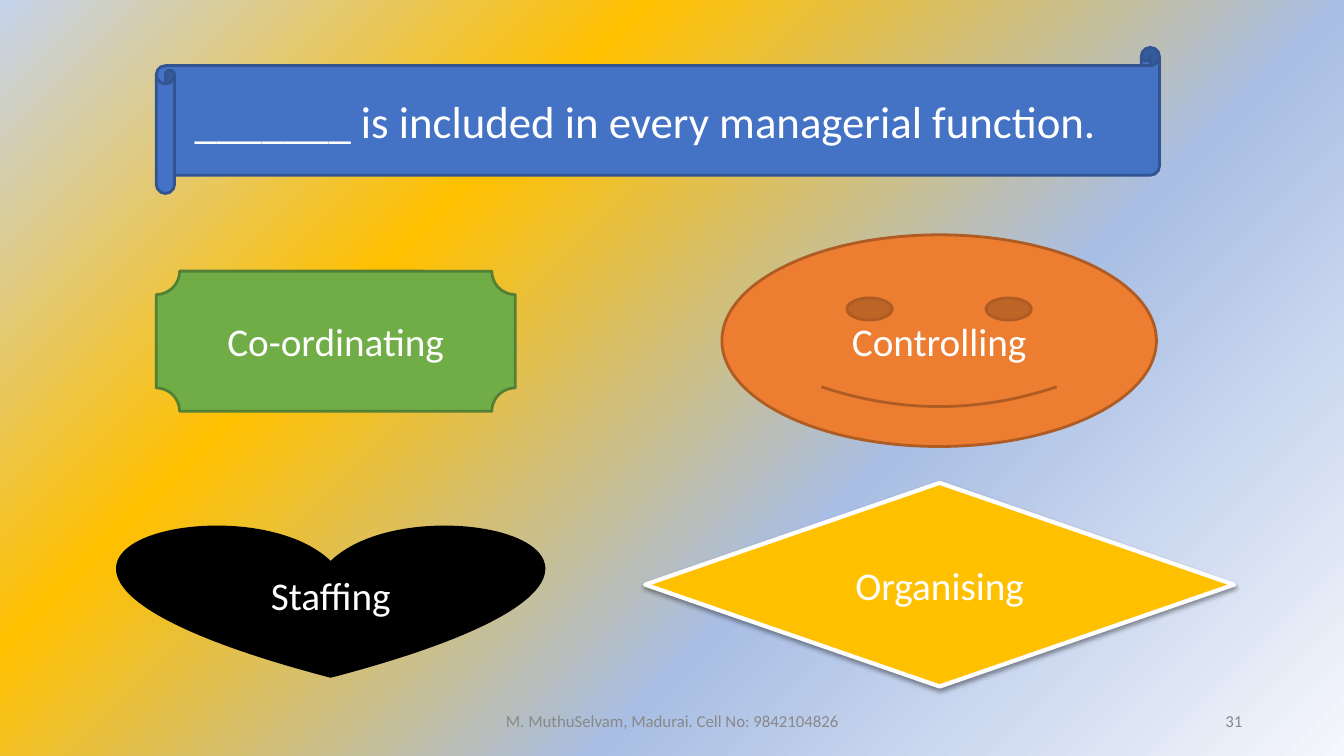
from lxml import etree
from pptx import Presentation
from pptx.dml.color import RGBColor
from pptx.enum.shapes import MSO_SHAPE as SHAPE
from pptx.enum.text import MSO_ANCHOR as ANCHOR, PP_ALIGN as ALIGN
from pptx.oxml.ns import qn
from pptx.util import Inches, Pt

FONT = "Calibri"
WHITE = RGBColor(0xFF, 0xFF, 0xFF)
BLACK = RGBColor(0x00, 0x00, 0x00)
GREY = RGBColor(0x88, 0x88, 0x88)
BLUE = RGBColor(0x44, 0x72, 0xC4)
DARK_BLUE = RGBColor(0x32, 0x54, 0x91)
GREEN = RGBColor(0x70, 0xAD, 0x47)
DARK_GREEN = RGBColor(0x53, 0x80, 0x35)
ORANGE = RGBColor(0xED, 0x7D, 0x31)
DARK_ORANGE = RGBColor(0xAF, 0x5C, 0x24)
GOLD = RGBColor(0xFF, 0xC0, 0x00)
PALE_BLUE = RGBColor(0xC5, 0xD3, 0xED)
SKY_BLUE = RGBColor(0xA9, 0xBE, 0xE4)
NEAR_WHITE = RGBColor(0xF5, 0xF7, 0xFC)

# Content: background stops run from top left to bottom right
BACKDROP = [(0, PALE_BLUE), (31, GOLD), (64, SKY_BLUE), (100, NEAR_WHITE)]

# text, preset, (left, top, width, height), fill, line, line width, size, alignment
QUESTION = (" _______ is included in every managerial function.", SHAPE.HORIZONTAL_SCROLL,
            (1.55, 0.47, 9.95, 1.45), BLUE, DARK_BLUE, 2, 32, ALIGN.LEFT)
ANSWERS = [
    ("Co-ordinating", SHAPE.PLAQUE, (1.55, 2.69, 3.56, 1.39),
     GREEN, DARK_GREEN, 2, 28, ALIGN.CENTER),
    ("Controlling", SHAPE.SMILEY_FACE, (7.16, 2.33, 4.31, 2.1),
     ORANGE, DARK_ORANGE, 2, 28, ALIGN.CENTER),
    ("Staffing", SHAPE.HEART, (1.18, 5.21, 4.2, 1.5),
     BLACK, BLACK, 2, 28, ALIGN.CENTER),
    ("Organising", SHAPE.DIAMOND, (6.4, 4.79, 5.84, 2.02),
     GOLD, WHITE, 3, 28, ALIGN.CENTER),
]
RAISED_ANSWER = "Organising"
FOOTERS = [
    ("M. MuthuSelvam, Madurai. Cell No: 9842104826", (4.42, 6.95, 4.5, 0.4), ALIGN.CENTER),
    ("31", (9.42, 6.95, 3, 0.4), ALIGN.RIGHT),
]


def paint_backdrop(slide):
    fill = slide.background.fill
    fill.gradient()
    fill.gradient_angle = 315
    stops = next(slide.element.iter(qn("a:gsLst")))
    for stop in list(stops):
        stops.remove(stop)
    for percent, color in BACKDROP:
        stop = etree.SubElement(stops, qn("a:gs"), pos=str(percent * 1000))
        etree.SubElement(stop, qn("a:srgbClr"), val=str(color))


def write(holder, text, size, color, align):
    frame = holder.text_frame
    frame.word_wrap = True
    frame.vertical_anchor = ANCHOR.MIDDLE
    paragraph = frame.paragraphs[0]
    paragraph.alignment = align
    run = paragraph.add_run()
    run.text = text
    run.font.name = FONT
    run.font.size = Pt(size)
    run.font.color.rgb = color


def add_figure(slide, text, preset, box, fill, line, line_width, size, align):
    figure = slide.shapes.add_shape(preset, *map(Inches, box))
    figure.shadow.inherit = False
    figure.fill.solid()
    figure.fill.fore_color.rgb = fill
    figure.line.color.rgb = line
    figure.line.width = Pt(line_width)
    write(figure, text, size, WHITE, align)
    return figure


def add_drop_shadow(figure):
    effects = next(figure.element.iter(qn("a:effectLst")))
    shadow = etree.SubElement(effects, qn("a:outerShdw"), blurRad=str(Pt(3.1)),
                              dist=str(Pt(1.6)), dir=str(90 * 60000), rotWithShape="0")
    color = etree.SubElement(shadow, qn("a:srgbClr"), val=str(BLACK))
    etree.SubElement(color, qn("a:alpha"), val="38000")


def main():
    deck = Presentation()
    deck.slide_width, deck.slide_height = Inches(13.33), Inches(7.5)
    slide = deck.slides.add_slide(deck.slide_layouts[6])
    paint_backdrop(slide)

    # Question banner and answer choices
    for text, *style in [QUESTION, *ANSWERS]:
        figure = add_figure(slide, text, *style)
        if text == RAISED_ANSWER:
            add_drop_shadow(figure)

    # Footer and page number
    for text, box, align in FOOTERS:
        write(slide.shapes.add_textbox(*map(Inches, box)), text, 12, GREY, align)

    deck.save("out.pptx")


if __name__ == "__main__":
    main()
